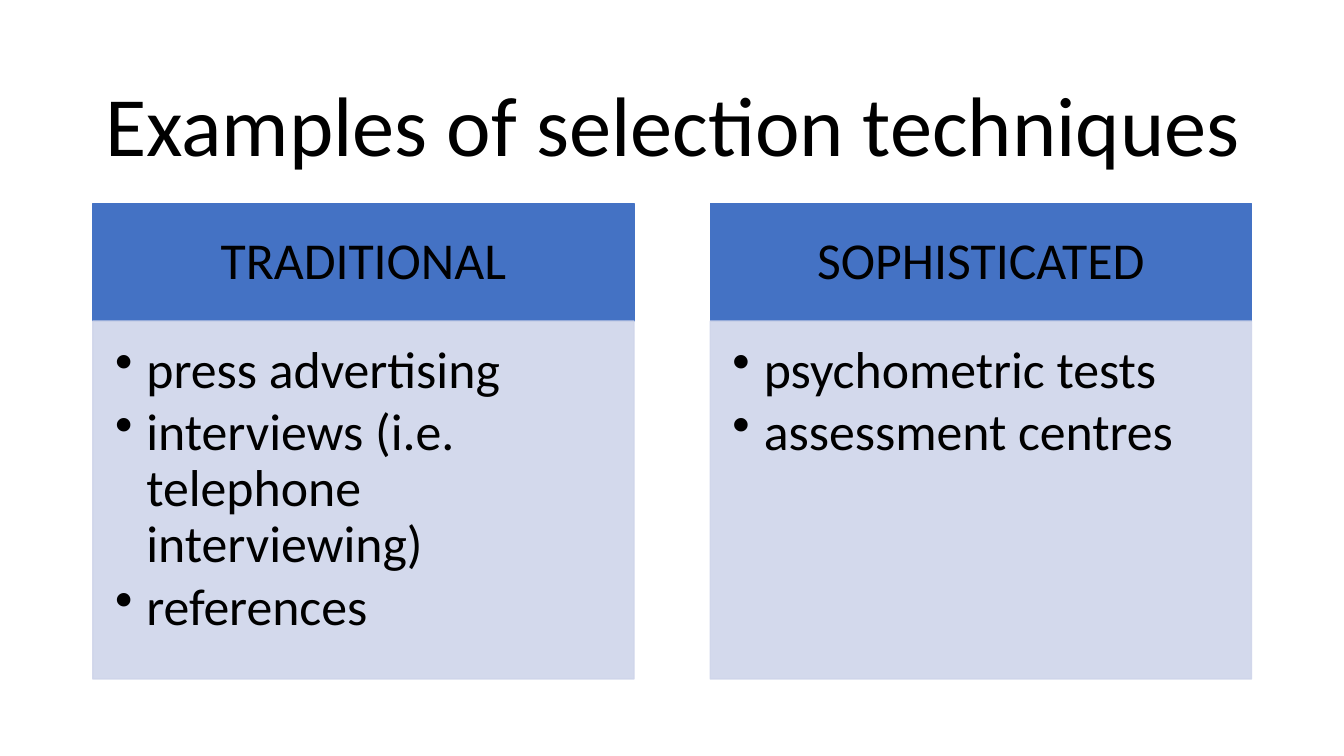
from dataclasses import dataclass

from lxml import etree
from pptx import Presentation
from pptx.dml.color import RGBColor
from pptx.enum.shapes import MSO_SHAPE
from pptx.enum.text import MSO_ANCHOR, PP_ALIGN
from pptx.oxml.ns import qn
from pptx.shapes.autoshape import Shape
from pptx.slide import Slide
from pptx.text.text import TextFrame
from pptx.util import Cm, Pt

RECT = MSO_SHAPE.RECTANGLE
TOP, MIDDLE = MSO_ANCHOR.TOP, MSO_ANCHOR.MIDDLE
LEFT, CENTER = PP_ALIGN.LEFT, PP_ALIGN.CENTER

FONT = "Calibri"
BLACK, BLUE, PALE = "000000", "4472C4", "CFD5EA"
TITLE_SIZE, TEXT_SIZE = 60.3, 37

# Lengths in centimetres
MARGIN, TITLE_W = 2.34, 29.21
COLUMN_W, COLUMN_PITCH = 13.64, 15.56
HEADER_TOP, HEADER_H = 5.13, 2.96
BODY_H = 9.02
BULLET_INDENT = 0.79


@dataclass(frozen=True)
class Column:
    heading: str
    techniques: tuple[str, ...]


COLUMNS = (
    Column("TRADITIONAL", ("press advertising",
                           "interviews (i.e. telephone interviewing)",
                           "references")),
    Column("SOPHISTICATED", ("psychometric tests", "assessment centres")),
)


def rgb(color: str) -> RGBColor:
    return RGBColor.from_string(color)


def write(tf: TextFrame, lines: tuple[str, ...], size: float, align: PP_ALIGN,
          anchor: MSO_ANCHOR, insets: tuple[float, float, float, float]) -> None:
    """Fill the frame; insets are left, top, right, bottom in centimetres."""
    tf.word_wrap = True
    tf.vertical_anchor = anchor
    tf.margin_left, tf.margin_top, tf.margin_right, tf.margin_bottom = map(Cm, insets)
    for i, line in enumerate(lines):
        p = tf.paragraphs[0] if i == 0 else tf.add_paragraph()
        p.text = line
        p.alignment = align
        p.line_spacing = 0.9
        p.font.name = FONT
        p.font.size = Pt(size)
        p.font.color.rgb = rgb(BLACK)


def add_bullets(tf: TextFrame) -> None:
    for p in tf.paragraphs:
        p.space_after = Pt(5)
        pPr = p._p.get_or_add_pPr()
        pPr.set("marL", str(Cm(BULLET_INDENT)))
        pPr.set("indent", str(-Cm(BULLET_INDENT)))
        bullet = etree.Element(qn("a:buChar"), char="•")
        pPr.insert_element_before(bullet, "a:tabLst", "a:defRPr", "a:extLst")


def add_box(s: Slide, left: float, top: float, height: float, color: str) -> Shape:
    sp = s.shapes.add_shape(RECT, Cm(left), Cm(top), Cm(COLUMN_W), Cm(height))
    sp.shadow.inherit = False
    sp.fill.solid()
    sp.fill.fore_color.rgb = rgb(color)
    sp.line.color.rgb = rgb(color)
    sp.line.width = Pt(1)
    return sp


def set_opacity(sp: Shape, percent: int) -> None:
    """Apply the opacity to both fill and line."""
    for clr in sp._element.spPr.iter(qn("a:srgbClr")):
        etree.SubElement(clr, qn("a:alpha"), val=str(percent * 1000))


def add_column(s: Slide, column: Column, left: float) -> None:
    header = add_box(s, left, HEADER_TOP, HEADER_H, BLUE)
    write(header.text_frame, (column.heading,), TEXT_SIZE, CENTER, MIDDLE,
          (0.74, 0.41, 0.74, 0.41))
    body = add_box(s, left, HEADER_TOP + HEADER_H, BODY_H, PALE)
    set_opacity(body, 90)
    write(body.text_frame, column.techniques, TEXT_SIZE, LEFT, TOP,
          (0.56, 0.56, 0.74, 0.81))
    add_bullets(body.text_frame)


def main() -> None:
    prs = Presentation()
    prs.slide_width, prs.slide_height = Cm(33.87), Cm(19.05)
    s = prs.slides.add_slide(prs.slide_layouts[6])
    title = s.shapes.add_textbox(Cm(MARGIN), Cm(1.02), Cm(TITLE_W), Cm(3.68))
    write(title.text_frame, ("Examples of selection techniques",), TITLE_SIZE,
          CENTER, MIDDLE, (0, 0.9, 0, 0.1))
    for i, column in enumerate(COLUMNS):
        add_column(s, column, MARGIN + i * COLUMN_PITCH)
    prs.save("out.pptx")


if __name__ == "__main__":
    main()
